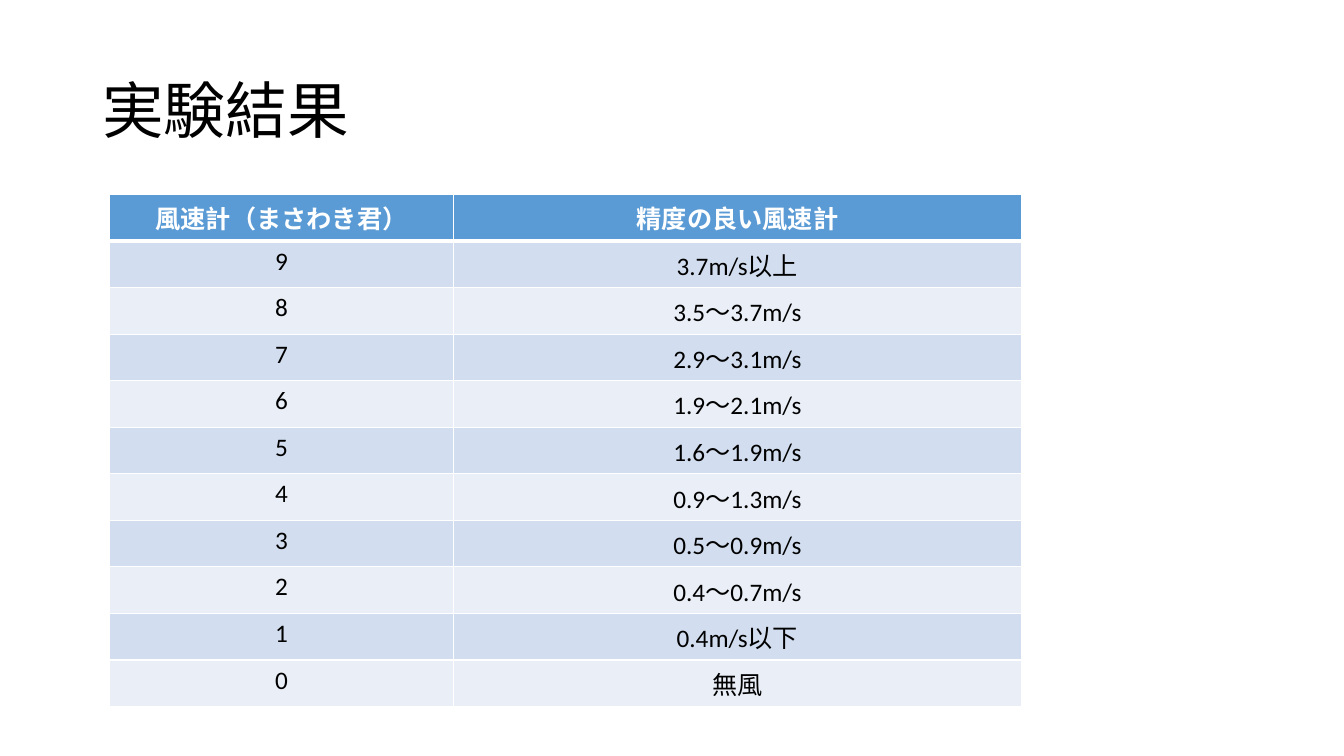
from lxml.etree import SubElement as Sub
from pptx import Presentation
from pptx.dml.color import RGBColor as RGB
from pptx.enum.text import MSO_ANCHOR as Anchor, PP_ALIGN as Align
from pptx.oxml.ns import qn
from pptx.util import Pt

FONT = "Calibri"
WHITE = RGB(0xFF, 0xFF, 0xFF)
BLACK = RGB(0x00, 0x00, 0x00)
BLUE = RGB(0x5B, 0x9B, 0xD5)
BANDS = [RGB(0xD2, 0xDE, 0xEF), RGB(0xEA, 0xEF, 0xF7)]

HEAD = ("風速計（まさわき君）", "精度の良い風速計")
SPEEDS = [
    "3.7m/s以上", "3.5～3.7m/s", "2.9～3.1m/s", "1.9～2.1m/s", "1.6～1.9m/s",
    "0.9～1.3m/s", "0.5～0.9m/s", "0.4～0.7m/s", "0.4m/s以下", "無風",
]


def style(para, size, color, bold=False):
    font = para.font
    font.name, font.size, font.bold = FONT, Pt(size), bold
    font.color.rgb = color


def border(cell, top, bottom):
    """Draw white cell edges; the widths of top and bottom are in points."""
    props = cell._tc.get_or_add_tcPr()
    for side, width in (("L", 1), ("R", 1), ("T", top), ("B", bottom)):
        line = Sub(props, qn(f"a:ln{side}"), w=str(Pt(width)))
        Sub(Sub(line, qn("a:solidFill")), qn("a:srgbClr"), val=str(WHITE))


def add_title(slide, text, left, top, width, height):
    frame = slide.shapes.add_textbox(
        Pt(left), Pt(top), Pt(width), Pt(height)).text_frame
    frame.word_wrap = True
    frame.vertical_anchor = Anchor.MIDDLE
    para = frame.paragraphs[0]
    para.text = text
    para.line_spacing = 0.9
    style(para, 44, BLACK)


def add_grid(slide, rows, left, top, width, height, split):
    """Place a two-column table; split is the share of the first column."""
    table = slide.shapes.add_table(
        len(rows), 2, Pt(left), Pt(top), Pt(width), Pt(height)).table
    table.columns[0].width = Pt(width * split)
    table.columns[1].width = Pt(width * (1 - split))
    for r, row in enumerate(rows):
        head = r == 0
        for c, text in enumerate(row):
            cell = table.cell(r, c)
            # Edges come before the fill in the cell's XML
            border(cell, 3 if r == 1 else 1, 3 if head else 1)
            cell.fill.solid()
            cell.fill.fore_color.rgb = BLUE if head else BANDS[(r - 1) % 2]
            para = cell.text_frame.paragraphs[0]
            para.text = text
            para.alignment = Align.CENTER
            style(para, 18, WHITE if head else BLACK, head)


def main():
    deck = Presentation()
    deck.slide_width, deck.slide_height = Pt(960), Pt(540)
    slide = deck.slides.add_slide(deck.slide_layouts[6])

    # Title
    add_title(slide, "実験結果", 66, 28.75, 828, 104.4)

    # Results: meter levels 9 down to 0 against measured speeds
    levels = [str(n) for n in range(9, -1, -1)]
    rows = [HEAD, *zip(levels, SPEEDS)]
    add_grid(slide, rows, 78.3, 138.9, 651.4, 366, 245.5 / 651.4)

    deck.save("out.pptx")


if __name__ == "__main__":
    main()
